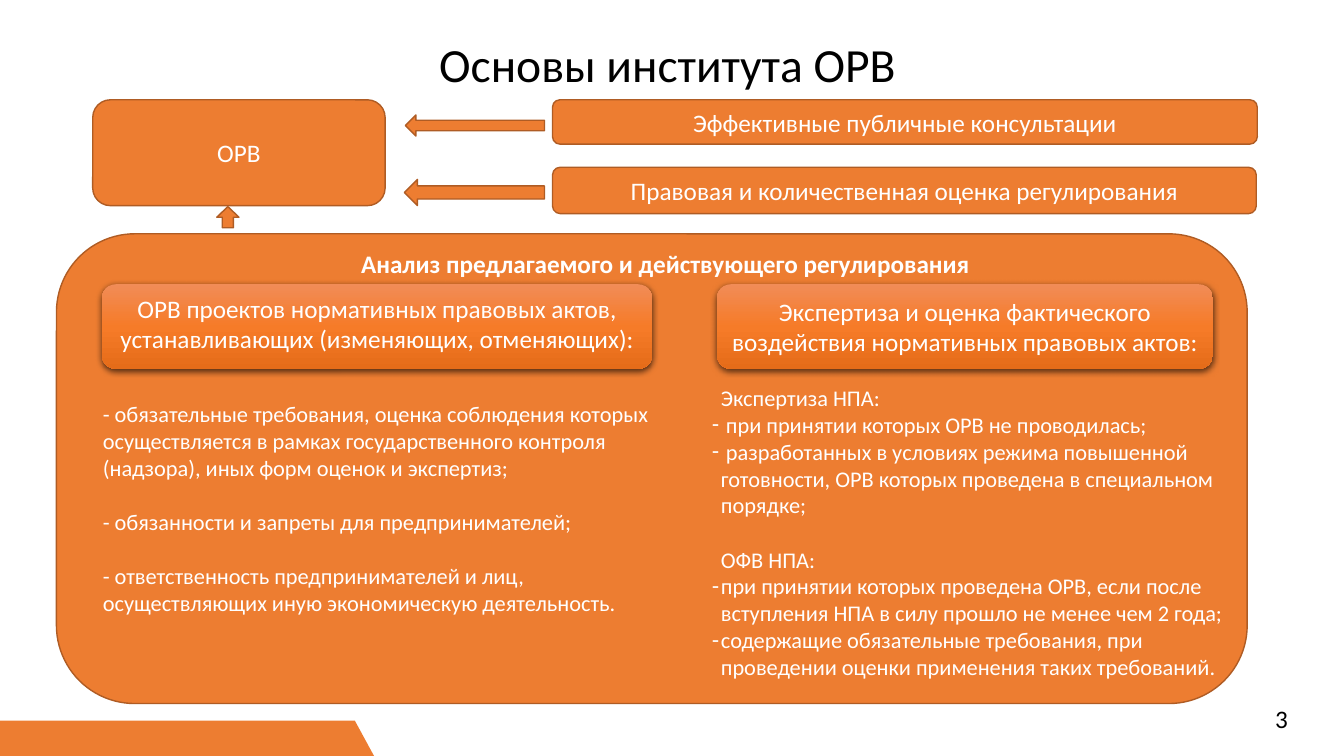
from dataclasses import dataclass

from lxml.etree import SubElement
from pptx import Presentation
from pptx.dml.color import RGBColor
from pptx.enum.shapes import MSO_SHAPE as Shape
from pptx.enum.text import MSO_ANCHOR as Anchor, MSO_AUTO_SIZE as AutoSize, PP_ALIGN as Align
from pptx.oxml.ns import qn
from pptx.util import Inches, Pt


@dataclass(frozen=True)
class Theme:
    font: str = "Calibri"
    orange: str = "ED7D31"
    outline: str = "AF5C24"
    white: str = "FFFFFF"
    black: str = "000000"
    gradient: tuple = ((0, "F18C57"), (50, "F67B28"), (100, "E56C19"))
    title: float = 34
    label: float = 18
    body: float = 16
    line_gap: float = 19.5


@dataclass(frozen=True)
class Box:
    left: float
    top: float
    width: float
    height: float
    text: str = ""
    kind: Shape = Shape.ROUNDED_RECTANGLE
    anchor: Anchor = Anchor.MIDDLE
    raised: bool = False


@dataclass(frozen=True)
class Item:
    text: str
    gap: bool = False
    dash: bool = False
    margin: float = 0


THEME = Theme()
HANG = 0.09

FLAT_BOXES = [
    Box(0.92, 0.99, 2.9, 1.05, "ОРВ"),
    Box(5.48, 0.99, 6.99, 0.44, "Эффективные публичные консультации"),
    Box(5.48, 1.66, 6.98, 0.46, "Правовая и количественная оценка регулирования"),
    Box(0.56, 2.32, 11.81, 4.66),
    Box(4.02, 1.14, 1.38, 0.21, kind=Shape.LEFT_ARROW),
    Box(4.01, 1.78, 1.39, 0.26, kind=Shape.LEFT_ARROW),
    Box(2.15, 2.05, 0.22, 0.21, kind=Shape.UP_ARROW),
]
RAISED_BOXES = [
    Box(1.01, 2.82, 5.46, 0.84, "ОРВ проектов нормативных правовых актов, "
        "устанавливающих (изменяющих, отменяющих):", anchor=Anchor.TOP, raised=True),
    Box(7.11, 2.82, 4.92, 0.84, "Экспертиза и оценка фактического воздействия "
        "нормативных правовых актов:", raised=True),
]
DRAFT_ACTS = [
    Item("- обязательные требования, оценка соблюдения которых осуществляется в рамках "
         "государственного контроля (надзора), иных форм оценок и экспертиз;"),
    Item("- обязанности и запреты для предпринимателей;", gap=True),
    Item("- ответственность предпринимателей и лиц, осуществляющих иную экономическую "
         "деятельность.", gap=True),
]
ACTS_IN_FORCE = [
    Item("Экспертиза НПА:", margin=HANG),
    Item(" при принятии которых ОРВ не проводилась;", dash=True, margin=HANG),
    Item(" разработанных в условиях режима повышенной готовности, ОРВ которых проведена "
         "в специальном порядке;", dash=True, margin=HANG),
    Item("ОФВ НПА:", gap=True, margin=HANG),
    Item("при принятии которых проведена ОРВ, если после вступления НПА в силу прошло "
         "не менее чем 2 года;", dash=True, margin=HANG),
    Item("содержащие обязательные требования, при проведении оценки применения таких "
         "требований.", dash=True, margin=HANG),
]


def add_run(p, text: str, size: float, color: str, bold: bool = False) -> None:
    r = p.add_run()
    r.text = text
    r.font.name, r.font.size, r.font.bold = THEME.font, Pt(size), bold
    r.font.color.rgb = RGBColor.from_string(color)


def place(sp, left: float, top: float, width: float, height: float) -> None:
    sp.left, sp.top = Inches(left), Inches(top)
    sp.width, sp.height = Inches(width), Inches(height)


def add_color(parent, color: str):
    return SubElement(parent, qn("a:srgbClr"), val=color)


def raise_shape(sp) -> None:
    """Give the shape a vertical gradient and a soft shadow below."""
    sp.line.fill.background()
    sp_pr = sp.element.spPr
    grad = SubElement(sp_pr, qn("a:gradFill"), rotWithShape="1")
    stops = SubElement(grad, qn("a:gsLst"))
    for position, color in THEME.gradient:
        add_color(SubElement(stops, qn("a:gs"), pos=str(position * 1000)), color)
    SubElement(grad, qn("a:lin"), ang="5400000", scaled="0")
    sp_pr.find(qn("a:prstGeom")).addnext(grad)
    shadow = SubElement(sp_pr.find(qn("a:effectLst")), qn("a:outerShdw"), blurRad=str(Pt(4.5)),
                        dist=str(Pt(1.5)), dir="5400000", rotWithShape="0")
    SubElement(add_color(shadow, THEME.black), qn("a:alpha"), val="63000")


def paint(sp, line: bool = True) -> None:
    sp.shadow.inherit = False
    sp.fill.solid()
    sp.fill.fore_color.rgb = RGBColor.from_string(THEME.orange)
    if line:
        sp.line.color.rgb = RGBColor.from_string(THEME.outline)
        sp.line.width = Pt(1)
    else:
        sp.line.fill.background()


def add_box(s, box: Box) -> None:
    sp = s.shapes.add_shape(box.kind, Inches(box.left), Inches(box.top),
                            Inches(box.width), Inches(box.height))
    if box.raised:
        sp.shadow.inherit = False
        raise_shape(sp)
    else:
        paint(sp)
    if box.text:
        tf = sp.text_frame
        tf.word_wrap, tf.vertical_anchor = True, box.anchor
        p = tf.paragraphs[0]
        p.alignment = Align.CENTER
        add_run(p, box.text, THEME.label, THEME.white)


def add_label(s, box: Box, color: str, align: Align, bold: bool = False) -> None:
    sp = s.shapes.add_textbox(Inches(box.left), Inches(box.top),
                              Inches(box.width), Inches(box.height))
    tf = sp.text_frame
    tf.word_wrap = True
    p = tf.paragraphs[0]
    p.alignment = align
    add_run(p, box.text, THEME.label, color, bold)


def fill_list(sp, items: list[Item]) -> None:
    tf = sp.text_frame
    tf.word_wrap, tf.auto_size, tf.vertical_anchor = True, AutoSize.NONE, Anchor.TOP
    for i, item in enumerate(items):
        p = tf.paragraphs[0] if i == 0 else tf.add_paragraph()
        p_pr = p._p.get_or_add_pPr()
        p_pr.set("marL", str(Inches(item.margin)))
        p_pr.set("indent", str(Inches(-item.margin if item.dash else 0)))
        if item.dash:
            SubElement(p_pr, qn("a:buChar"), char="-")
        else:
            SubElement(p_pr, qn("a:buNone"))
        p.alignment = Align.LEFT
        p.space_before = Pt(THEME.line_gap if item.gap else 0)
        add_run(p, item.text, THEME.body, THEME.white)
    # Bring the list in front of the panel
    sp.element.getparent().append(sp.element)


def main() -> None:
    prs = Presentation()
    prs.slide_width, prs.slide_height = Inches(13.33), Inches(7.5)
    s = prs.slides.add_slide(prs.slide_layouts[3])
    title, left_list, right_list = s.placeholders

    # Footer strip
    outline = s.shapes.build_freeform(0, Inches(7.15))
    outline.add_line_segments([(Inches(x), Inches(y)) for x, y in
                               ((3.52, 7.15), (3.71, 7.5), (0, 7.5))])
    paint(outline.convert_to_shape(), line=False)

    # Title
    place(title, 0.87, 0.26, 11.5, 0.81)
    tf = title.text_frame
    tf.auto_size, tf.vertical_anchor = AutoSize.NONE, Anchor.MIDDLE
    p = tf.paragraphs[0]
    p.alignment, p.line_spacing = Align.CENTER, 0.9
    add_run(p, "Основы института ОРВ", THEME.title, THEME.black)

    # Scheme: boxes, panel and arrows
    for box in FLAT_BOXES + RAISED_BOXES:
        add_box(s, box)
    add_label(s, Box(2, 2.41, 9.2, 0.4, "Анализ предлагаемого и действующего регулирования"),
              THEME.white, Align.CENTER, bold=True)

    # Lists on the panel
    place(left_list, 0.92, 3.92, 5.66, 2.49)
    fill_list(left_list, DRAFT_ACTS)
    place(right_list, 6.96, 3.76, 5.36, 3.33)
    fill_list(right_list, ACTS_IN_FORCE)

    # Slide number
    add_label(s, Box(12.55, 6.93, 0.36, 0.4, "3"), THEME.black, Align.LEFT)
    prs.save("out.pptx")


if __name__ == "__main__":
    main()
